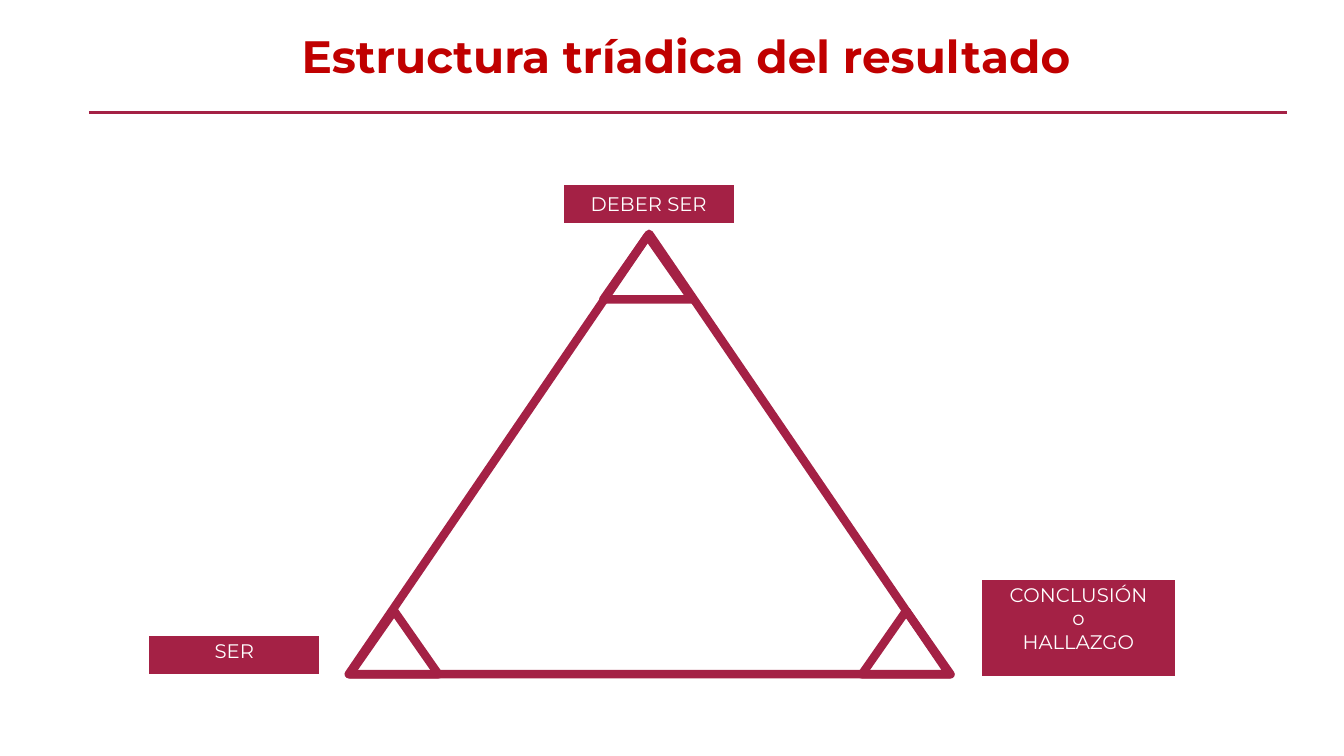
from dataclasses import dataclass

from lxml.etree import SubElement
from pptx import Presentation
from pptx.dml.color import RGBColor
from pptx.enum.shapes import MSO_CONNECTOR as Connector, MSO_SHAPE as Shape
from pptx.enum.text import MSO_ANCHOR as Anchor, PP_ALIGN as Align
from pptx.oxml.ns import qn
from pptx.util import Pt


@dataclass(frozen=True)
class Theme:
    font: str = "Montserrat"
    crimson: RGBColor = RGBColor(0xA4, 0x21, 0x45)
    red: RGBColor = RGBColor(0xC0, 0x00, 0x00)
    white: RGBColor = RGBColor(0xFF, 0xFF, 0xFF)
    title_size: Pt = Pt(32.4)
    label_size: Pt = Pt(14)
    rule_width: Pt = Pt(2.25)
    label_border: Pt = Pt(3)
    triangle_border: Pt = Pt(6)


def style_text(paragraph, size, color, bold):
    paragraph.alignment = Align.CENTER
    formats = {"name": theme.font, "size": size, "bold": bold}
    for attribute, value in formats.items():
        setattr(paragraph.font, attribute, value)
    paragraph.font.color.rgb = color


def add_figure(kind, box, fill, line_color, line_width):
    figure = diagram.shapes.add_shape(kind, *map(Pt, box))
    figure.shadow.inherit = False
    if fill is None:
        figure.fill.background()
    else:
        figure.fill.solid()
        figure.fill.fore_color.rgb = fill
    figure.line.color.rgb = line_color
    figure.line.width = line_width
    return figure


theme = Theme()
prs = Presentation()
prs.slide_width, prs.slide_height = Pt(960), Pt(540)
slide = prs.slides.add_slide(prs.slide_layouts[5])

title = slide.shapes.title
title_place = {"left": 65.5, "top": 11.5, "width": 849, "height": 61}
for attribute, value in title_place.items():
    setattr(title, attribute, Pt(value))
title.text_frame.text = "Estructura tríadica del resultado"
title.text_frame.vertical_anchor = Anchor.MIDDLE
title.text_frame.word_wrap = True
for side in ("left", "top", "right", "bottom"):
    setattr(title.text_frame, f"margin_{side}", Pt(3.6))
title.text_frame.paragraphs[0].line_spacing = 0.9
style_text(title.text_frame.paragraphs[0], theme.title_size, theme.red, True)

title_rule = slide.shapes.add_connector(
    Connector.STRAIGHT, Pt(63.5), Pt(80.5), Pt(919.5), Pt(80.5))
title_rule.line.color.rgb = theme.crimson
title_rule.line.width = theme.rule_width
SubElement(title_rule._element.spPr, qn("a:effectLst"))

diagram = slide.shapes.add_group_shape()

triangles = [
    ((249.1, 167, 429.1, 314.6), theme.white),
    ((430.9, 168.5, 63.4, 45.4), None),
    ((249.8, 436.3, 63.4, 45.4), None),
    ((615.6, 436.3, 63.4, 45.4), None),
]
for box, fill in triangles:
    triangle = add_figure(Shape.ISOSCELES_TRIANGLE, box, fill,
                          theme.crimson, theme.triangle_border)
    SubElement(triangle.line._get_or_add_ln(), qn("a:round"))

labels = [
    ("DEBER SER", (401.1, 130.3, 124.6, 30.2), Anchor.MIDDLE),
    ("SER", (105.1, 452.9, 124.6, 30.2), Anchor.TOP),
    ("CONCLUSIÓN\no\nHALLAZGO", (699.8, 412.6, 141.1, 72), Anchor.TOP),
]
for text, box, anchor in labels:
    label = add_figure(Shape.RECTANGLE, box, theme.crimson,
                       theme.white, theme.label_border)
    label.text_frame.text = text
    label.text_frame.word_wrap = True
    label.text_frame.vertical_anchor = anchor
    for paragraph in label.text_frame.paragraphs:
        style_text(paragraph, theme.label_size, theme.white, False)

prs.save("out.pptx")
